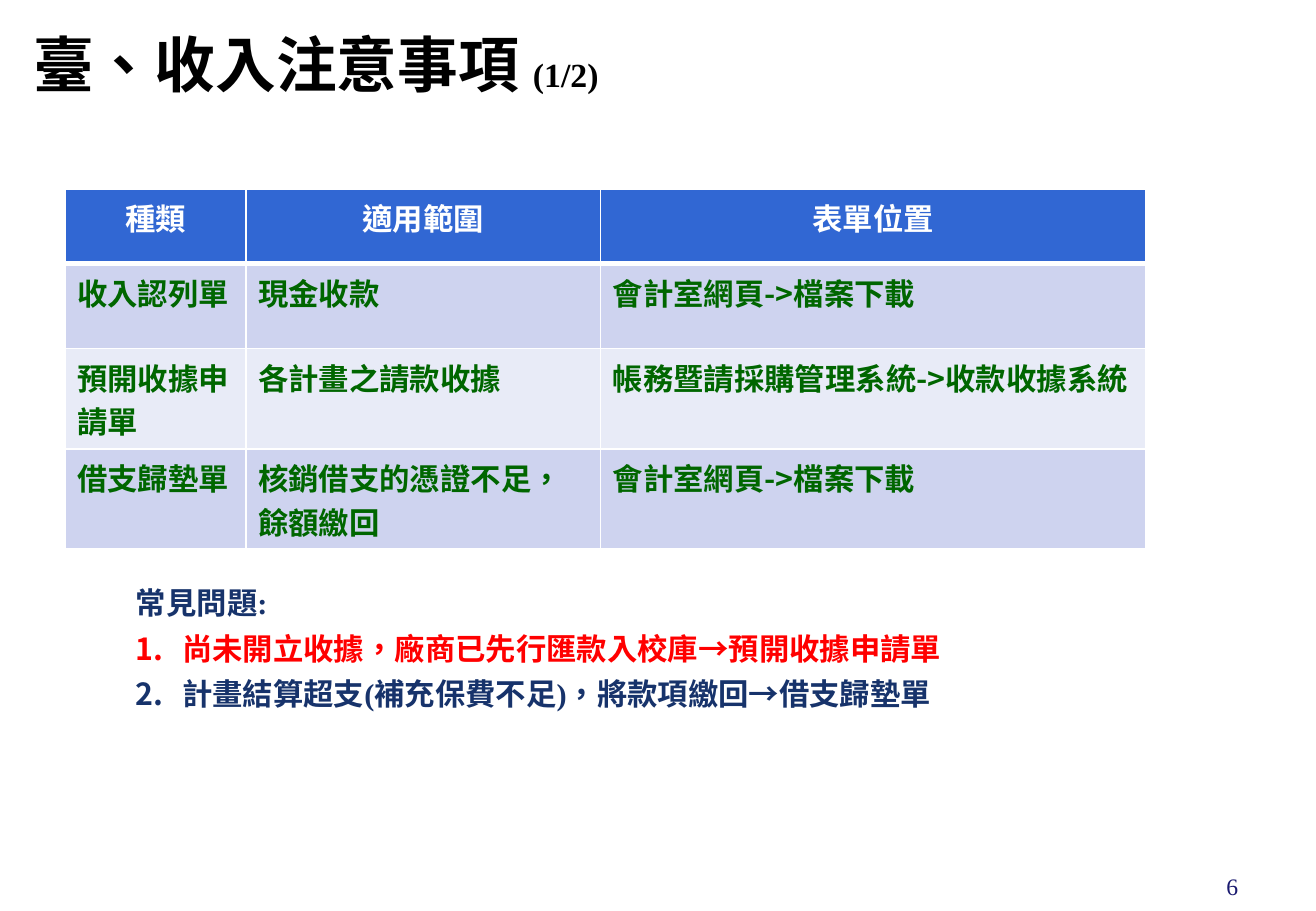
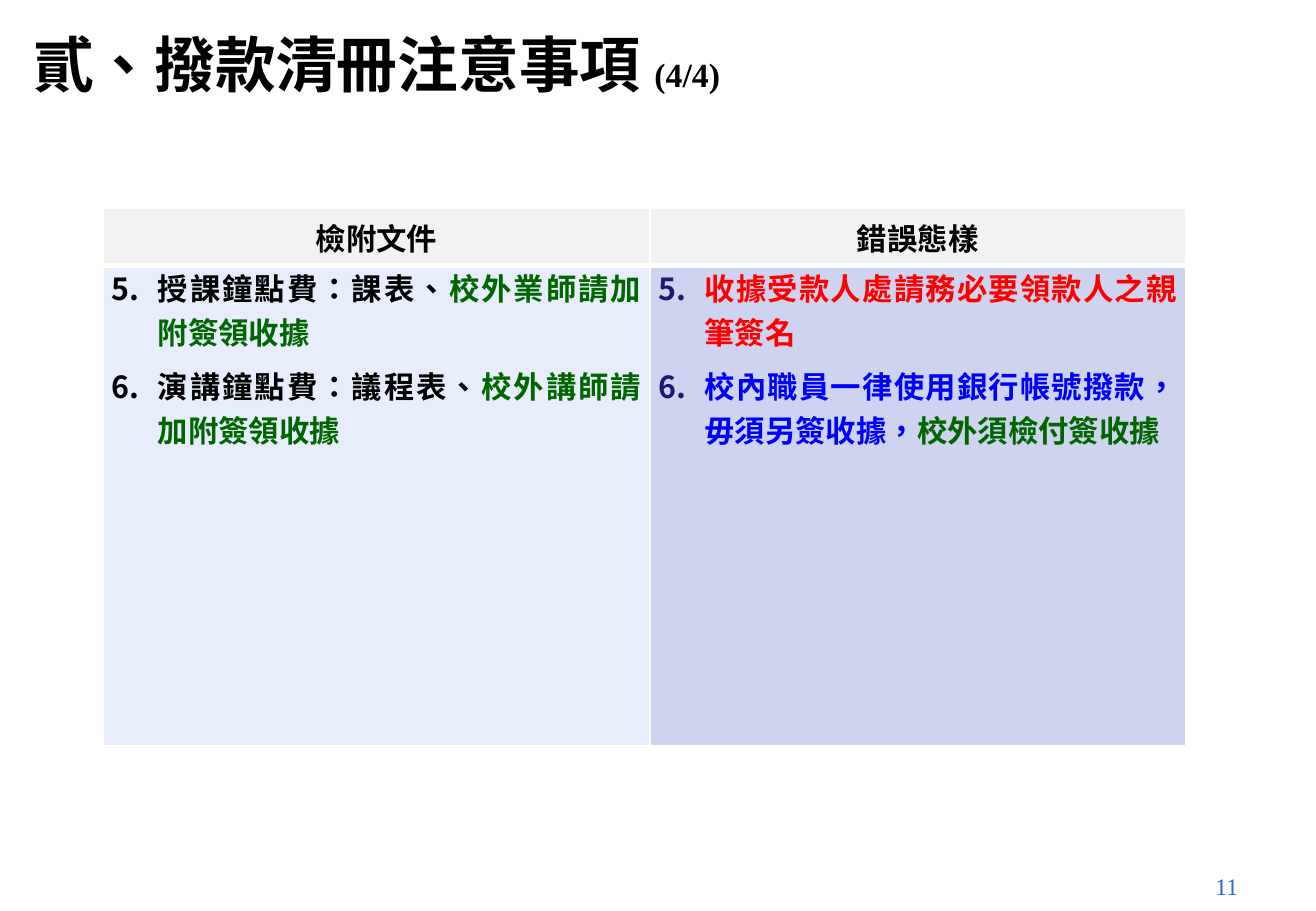
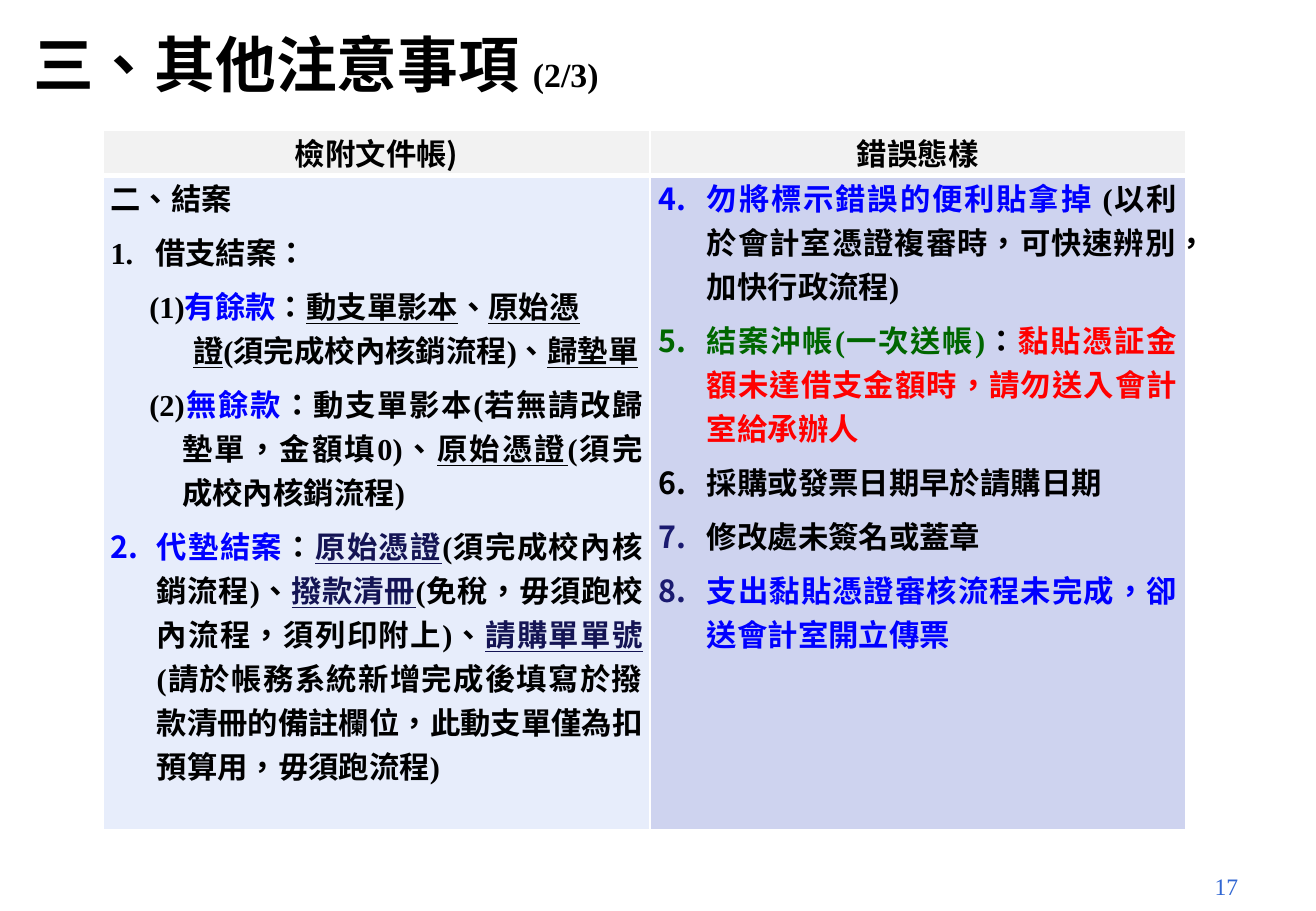
from dataclasses import dataclass
from typing import Optional

from lxml.etree import SubElement
from pptx import Presentation
from pptx.dml.color import RGBColor
from pptx.enum.lang import MSO_LANGUAGE_ID
from pptx.enum.text import MSO_ANCHOR, MSO_AUTO_SIZE, PP_ALIGN
from pptx.oxml.ns import qn
from pptx.util import Pt

SERIF, SANS = "Times New Roman", "Noto Sans CJK SC"

BLACK = RGBColor(0x00, 0x00, 0x00)
WHITE = RGBColor(0xFF, 0xFF, 0xFF)
RED = RGBColor(0xFF, 0x00, 0x00)
GREEN = RGBColor(0x00, 0x66, 0x00)
BLUE = RGBColor(0x00, 0x00, 0xFF)
NAVY = RGBColor(0x17, 0x33, 0x6B)
INDIGO = RGBColor(0x1A, 0x1A, 0x70)
DEEP_INDIGO = RGBColor(0x14, 0x14, 0x54)
ROYAL = RGBColor(0x31, 0x67, 0xD3)
LAVENDER = RGBColor(0xCE, 0xD3, 0xEF)
PALE_LAVENDER = RGBColor(0xE8, 0xEB, 0xF7)
PALE_BLUE = RGBColor(0xE7, 0xED, 0xFB)
PALE_GRAY = RGBColor(0xF2, 0xF2, 0xF2)

LINE_BREAK = "\v"


@dataclass
class Item:
    """A paragraph: runs are (text, colour) or (text, colour, underlined)."""
    runs: list
    start: Optional[int] = None
    margin: float = 0
    hanging: float = 0
    number_color: Optional[RGBColor] = None
    align: Optional[PP_ALIGN] = None


def numbered(start, runs, number_color=None, indent=27.36):
    return Item(runs, start, indent, indent, number_color)


FORMS_HEADER = ["種類", "適用範圍", "表單位置"]
FORMS = [
    ["收入認列單", "現金收款", "會計室網頁->檔案下載"],
    ["預開收據申請單", "各計畫之請款收據", "帳務暨請採購管理系統->收款收據系統"],
    ["借支歸墊單", "核銷借支的憑證不足，餘額繳回", "會計室網頁->檔案下載"],
]
QUESTIONS = [
    Item([("常見問題:", NAVY)]),
    numbered(1, [("尚未開立收據，廠商已先行匯款入校庫→預開收據申請單", RED)]),
    numbered(1, [("計畫結算超支(補充保費不足)，將款項繳回→借支歸墊單", NAVY)]),
]

PAYROLL_DOCUMENTS = [
    numbered(5, [("授課鐘點費：課表、", BLACK), ("校外業師請加附簽領收據", GREEN)]),
    numbered(5, [("演講鐘點費：議程表、", BLACK), ("校外講師請加附簽領收據", GREEN)]),
]
PAYROLL_ERRORS = [
    numbered(5, [("收據受款人處請務必要領款人之親筆簽名", RED)], INDIGO),
    numbered(5, [("校內職員一律使用銀行帳號撥款，毋須另簽收據，", BLUE),
                 ("校外須檢付簽收據", GREEN)], INDIGO),
]

CLOSING_DOCUMENTS = [
    Item([("二、結案", BLACK)]),
    Item([("1.\t借支結案：", BLACK)], margin=26.5, hanging=26.5),
    Item([("(1)", BLACK), ("有餘款", BLUE), ("：", BLACK),
          ("動支單影本", BLACK, True), ("、", BLACK), ("原始憑", BLACK, True),
          (LINE_BREAK, BLACK), ("證", BLACK, True),
          ("(須完成校內核銷流程)、", BLACK), ("歸墊單", BLACK, True)],
         margin=48.96, hanging=25.92, align=PP_ALIGN.LEFT),
    Item([("(2)", BLACK), ("無餘款", BLUE),
          ("：動支單影本(若無請改歸墊單，金額填0)、", BLACK),
          ("原始憑證", BLACK, True), ("(須完成校內核銷流程)", BLACK)],
         margin=42.48, hanging=19.44),
    numbered(2, [("代墊結案", BLUE), ("：", BLACK), ("原始憑證", DEEP_INDIGO, True),
                 ("(須完成校內核銷流程)、", BLACK), ("撥款清冊", DEEP_INDIGO, True),
                 ("(免稅，毋須跑校內流程，須列印附上)、", BLACK),
                 ("請購單單號", DEEP_INDIGO, True),
                 ("(請於帳務系統新增完成後填寫於撥款清冊的備註欄位，"
                  "此動支單僅為扣預算用，毋須跑流程)", BLACK)]),
]
CLOSING_ERRORS = [
    numbered(4, runs, number_color, indent=28.8) for runs, number_color in [
        ([("勿將標示錯誤的便利貼拿掉 ", BLUE),
          ("(以利於會計室憑證複審時，可快速辨別，加快行政流程)", BLACK)], None),
        ([("結案沖帳(一次送帳)", GREEN), ("：", BLACK),
          ("黏貼憑証金額未達借支金額時，請勿送入會計室給承辦人", RED)], None),
        ([("採購或發票日期早於請購日期", BLACK)], None),
        ([("修改處未簽名或蓋章", BLACK)], INDIGO),
        ([("支出黏貼憑證審核流程未完成，卻送會計室開立傳票", BLUE)], INDIGO),
    ]
]


def add_run(paragraph, text, color, underlined=False, size=18, font=SERIF, bold=True):
    run = paragraph.add_run()
    run.text = text
    run.font.size, run.font.bold, run.font.name = Pt(size), bold, font
    run.font.color.rgb = color
    run.font.language_id = MSO_LANGUAGE_ID.TRADITIONAL_CHINESE
    if underlined:
        run.font.underline = True
    SubElement(run.font._element, qn("a:ea")).set("typeface", SANS)


def add_numbering(paragraph, item):
    properties = paragraph._p.get_or_add_pPr()
    if item.number_color is not None:
        number_color = SubElement(properties, qn("a:buClr"))
        SubElement(number_color, qn("a:srgbClr")).set("val", str(item.number_color))
    SubElement(properties, qn("a:buFont")).set("typeface", SANS)
    numbering = SubElement(properties, qn("a:buAutoNum"))
    numbering.set("type", "arabicPeriod")
    numbering.set("startAt", str(item.start))


def write_items(frame, items, align, before, after=0, line_spacing=None):
    for index, item in enumerate(items):
        paragraph = frame.add_paragraph() if index else frame.paragraphs[0]
        paragraph.alignment = align if item.align is None else item.align
        paragraph.space_before = Pt(before if index else 0)
        paragraph.space_after = Pt(after)
        if line_spacing:
            paragraph.line_spacing = Pt(line_spacing)
        properties = paragraph._p.get_or_add_pPr()
        properties.set("marL", str(Pt(item.margin)))
        properties.set("indent", str(-Pt(item.hanging)))
        if item.start is not None:
            add_numbering(paragraph, item)
        for run in item.runs:
            if run[0] == LINE_BREAK:
                paragraph.add_line_break()
            else:
                add_run(paragraph, *run)


def start_slide(deck, heading, part, number, number_color):
    """Add a slide with its title and page number."""
    slide = deck.slides.add_slide(deck.slide_layouts[5])
    title = slide.shapes.title
    title.left, title.top, title.width, title.height = Pt(12.5), Pt(16.5), Pt(584.5), Pt(42)
    frame = title.text_frame
    frame.auto_size, frame.vertical_anchor = MSO_AUTO_SIZE.NONE, MSO_ANCHOR.MIDDLE
    paragraph = frame.paragraphs[0]
    paragraph.alignment = PP_ALIGN.LEFT
    add_run(paragraph, heading + " ", BLACK, size=36)
    add_run(paragraph, part, BLACK, size=20)

    page = slide.shapes.add_textbox(Pt(558.5), Pt(513.5), Pt(182.5), Pt(19.5))
    page.text_frame.word_wrap = True
    paragraph = page.text_frame.paragraphs[0]
    paragraph.alignment = PP_ALIGN.RIGHT
    add_run(paragraph, number, number_color, size=14, bold=False)
    return slide


def add_grid(slide, left, top, widths, heights):
    table = slide.shapes.add_table(len(heights), len(widths), Pt(left), Pt(top),
                                   Pt(sum(widths)), Pt(sum(heights))).table
    for column, width in zip(table.columns, widths):
        column.width = Pt(width)
    for row, height in zip(table.rows, heights):
        row.height = Pt(height)
    return table


def style_cell(cell, row, fill):
    """Draw white borders, thick under the header row, then fill the cell."""
    properties = cell._tc.get_or_add_tcPr()
    thick_side = {0: "B", 1: "T"}.get(row)
    for side in "LRTB":
        border = SubElement(properties, qn("a:ln" + side))
        border.set("w", str(Pt(3 if side == thick_side else 1)))
        SubElement(SubElement(border, qn("a:solidFill")),
                   qn("a:srgbClr")).set("val", str(WHITE))
    cell.fill.solid()
    cell.fill.fore_color.rgb = fill


def add_forms_table(slide):
    table = add_grid(slide, 38.5, 112.3, [107.28, 210.24, 323.28], [44, 50.4, 59.4, 59.4])
    for row, texts in enumerate([FORMS_HEADER] + FORMS):
        fill = ROYAL if row == 0 else LAVENDER if row % 2 else PALE_LAVENDER
        for column, text in enumerate(texts):
            cell = table.cell(row, column)
            style_cell(cell, row, fill)
            paragraph = cell.text_frame.paragraphs[0]
            paragraph.alignment = PP_ALIGN.LEFT if row else PP_ALIGN.CENTER
            add_run(paragraph, text, GREEN if row else WHITE, font=SANS)


def add_checklist(slide, top, heights, columns, left_inset=5.04):
    """Add the table that sets required documents beside common errors."""
    table = add_grid(slide, 61.2, top, [324, 317.5], heights)
    fills = [PALE_BLUE, LAVENDER]
    insets = [left_inset, 5.04]
    for column, (heading, items) in enumerate(columns):
        header, body = table.cell(0, column), table.cell(1, column)
        for row, cell in enumerate([header, body]):
            style_cell(cell, row, fills[column] if row else PALE_GRAY)
            cell.margin_left = cell.margin_right = Pt(insets[column] if row else 5.04)
            cell.margin_top = cell.margin_bottom = Pt(0)
        header.vertical_anchor = MSO_ANCHOR.MIDDLE
        header.text_frame.paragraphs[0].alignment = PP_ALIGN.CENTER
        add_run(header.text_frame.paragraphs[0], heading, BLACK, font=SANS)
        write_items(body.text_frame, items, PP_ALIGN.JUSTIFY, before=3, after=3)


def main():
    deck = Presentation()
    deck.slide_width, deck.slide_height = Pt(780), Pt(540)

    income = start_slide(deck, "臺、收入注意事項", "(1/2)", "6", INDIGO)
    add_forms_table(income)
    questions = income.shapes.add_textbox(Pt(73.5), Pt(343.5), Pt(496), Pt(110))
    questions.text_frame.word_wrap = True
    write_items(questions.text_frame, QUESTIONS, PP_ALIGN.LEFT, before=6, line_spacing=21)

    payroll = start_slide(deck, "貳、撥款清冊注意事項", "(4/4)", "11", ROYAL)
    add_checklist(payroll, 123.5, [34, 284.5],
                  [("檢附文件", PAYROLL_DOCUMENTS), ("錯誤態樣", PAYROLL_ERRORS)])

    closing = start_slide(deck, "三、其他注意事項", "(2/3)", "17", ROYAL)
    add_checklist(closing, 77, [27, 388],
                  [("檢附文件帳)", CLOSING_DOCUMENTS), ("錯誤態樣", CLOSING_ERRORS)],
                  left_inset=4.32)

    deck.save("out.pptx")


if __name__ == "__main__":
    main()
